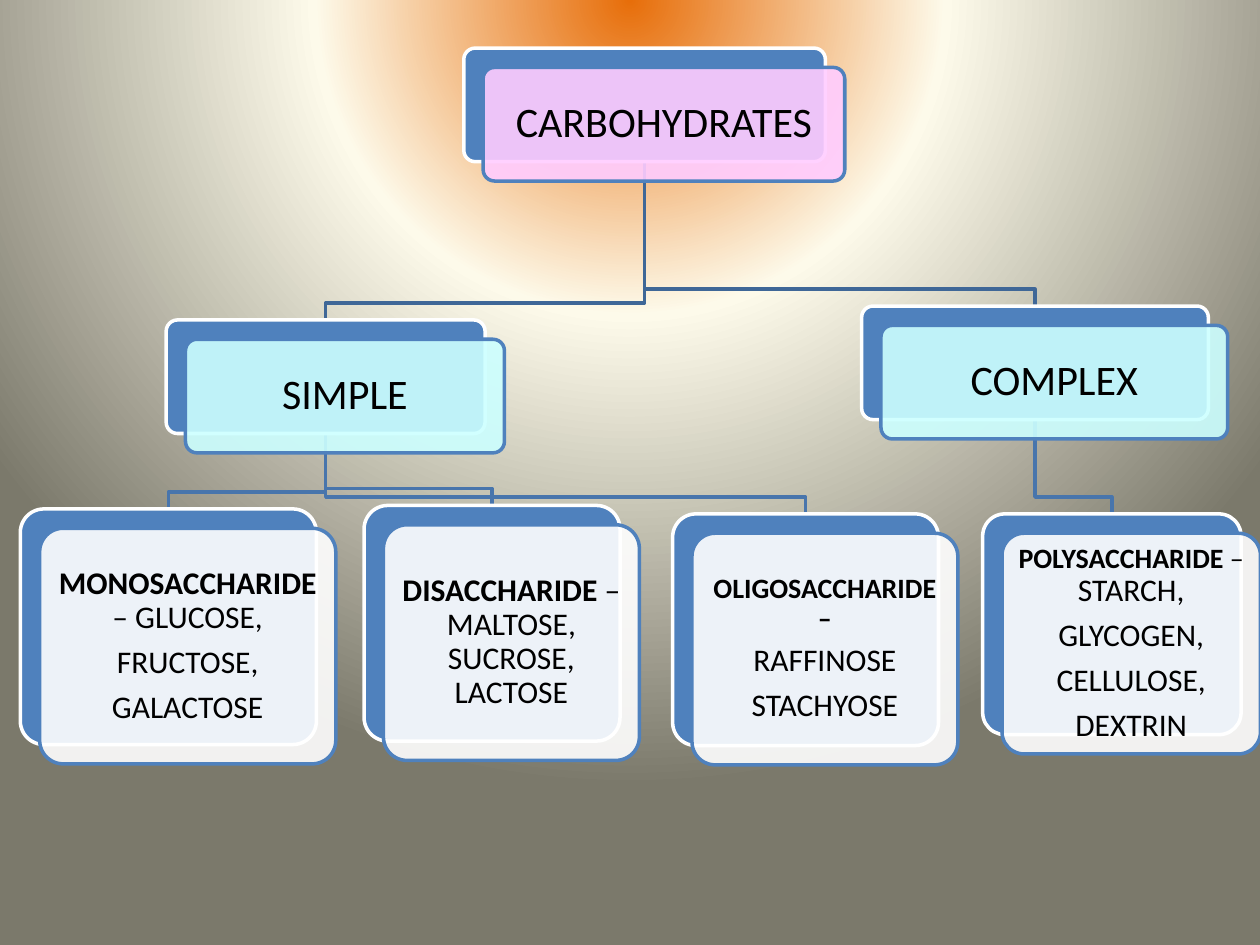
from collections import namedtuple

from lxml import etree
from pptx import Presentation
from pptx.dml.color import RGBColor
from pptx.enum.shapes import MSO_SHAPE
from pptx.enum.text import MSO_ANCHOR, PP_ALIGN
from pptx.oxml import parse_xml
from pptx.oxml.ns import nsdecls, qn
from pptx.util import Cm, Pt

ROUNDED = MSO_SHAPE.ROUNDED_RECTANGLE
MIDDLE = MSO_ANCHOR.MIDDLE
CENTER = PP_ALIGN.CENTER

BLACK = RGBColor(0x00, 0x00, 0x00)
WHITE = RGBColor(0xFF, 0xFF, 0xFF)
BLUE = RGBColor(0x4F, 0x81, 0xBD)
PINK = RGBColor(0xFF, 0xCC, 0xFF)
CYAN = RGBColor(0xCC, 0xFF, 0xFF)
UPPER_LINE = RGBColor(0x3F, 0x67, 0x97)
LOWER_LINE = RGBColor(0x48, 0x75, 0xAC)
GLOW_STOPS = [
    (0, RGBColor(0xE7, 0x6E, 0x0A)),
    (40, RGBColor(0xFD, 0xFA, 0xEA)),
    (100, RGBColor(0x7B, 0x79, 0x6B)),
]

FONT = "Calibri"
CARD_OFFSET = 0.39  # shift of the front card from the back card, cm
BEND_HEIGHT = 0.34  # height of a branch's bend above the child, cm
LINE_WIDTH = Pt(2)

# Box of a back card, in cm
Box = namedtuple("Box", "left top width height")

BOXES = {
    "carbohydrates": Box(9.35, 0.97, 7.29, 2.29),
    "simple": Box(3.35, 6.45, 6.43, 2.29),
    "complex": Box(17.37, 6.17, 6.99, 2.29),
    "monosaccharide": Box(0.41, 10.26, 5.97, 4.75),
    "disaccharide": Box(7.34, 10.19, 5.16, 4.75),
    "oligosaccharide": Box(13.56, 10.36, 5.36, 4.67),
    "polysaccharide": Box(19.81, 10.36, 5.21, 4.45),
}

# Parent, child and colour, from back to front
BRANCHES = [
    ("complex", "polysaccharide", LOWER_LINE),
    ("carbohydrates", "complex", UPPER_LINE),
    ("simple", "oligosaccharide", LOWER_LINE),
    ("simple", "disaccharide", LOWER_LINE),
    ("simple", "monosaccharide", LOWER_LINE),
    ("carbohydrates", "simple", UPPER_LINE),
]

# Headings: name, text, colour
HEADINGS = [
    ("carbohydrates", "CARBOHYDRATES", PINK),
    ("simple", "SIMPLE", CYAN),
    ("complex", "COMPLEX", CYAN),
]

# Saccharides: name, paragraphs of (text, size, bold) runs
SACCHARIDES = [
    ("monosaccharide", [
        [("MONOSACCHARIDE", 18, True), (" – GLUCOSE,", 18, False)],
        [("FRUCTOSE,", 18, False)],
        [("GALACTOSE", 18, False)],
    ]),
    ("disaccharide", [
        [("DISACCHARIDE", 18, True),
         (" – MALTOSE, SUCROSE, LACTOSE", 18, False)],
    ]),
    ("oligosaccharide", [
        [("OLIGOSACCHARIDE –", 16, True)],
        [("RAFFINOSE", 18, False)],
        [("STACHYOSE", 18, False)],
    ]),
    ("polysaccharide", [
        [("POLYSACCHARIDE", 16, True), (" – ", 16, False),
         ("STARCH,", 18, False)],
        [("GLYCOGEN,", 18, False)],
        [("CELLULOSE,", 18, False)],
        [("DEXTRIN", 18, False)],
    ]),
]


def set_glow_background(slide):
    """Radial gradient whose centre lies above the slide."""
    stops = "".join(
        f'<a:gs pos="{position * 1000}"><a:srgbClr val="{color}"/></a:gs>'
        for position, color in GLOW_STOPS)
    background = parse_xml(
        f'<p:bg {nsdecls("p", "a")}><p:bgPr><a:gradFill rotWithShape="1">'
        f'<a:gsLst>{stops}</a:gsLst><a:path path="circle">'
        '<a:fillToRect l="50000" t="-80000" r="50000" b="180000"/></a:path>'
        '</a:gradFill><a:effectLst/></p:bgPr></p:bg>')
    slide.element.cSld.insert(0, background)


def add_run(paragraph, text, size=18, bold=False, color=BLACK):
    run = paragraph.add_run()
    run.text = text
    run.font.name = FONT
    run.font.size = Pt(size)
    run.font.bold = bold
    run.font.color.rgb = color


def write_text(shape, paragraphs, inset):
    frame = shape.text_frame
    frame.word_wrap = True
    frame.vertical_anchor = MIDDLE
    frame.margin_left = frame.margin_right = Cm(inset)
    frame.margin_top = frame.margin_bottom = Cm(inset)
    for index, runs in enumerate(paragraphs):
        paragraph = frame.add_paragraph() if index else frame.paragraphs[0]
        paragraph.alignment = CENTER
        paragraph.line_spacing = 0.9
        # Spacing after as a share of the line height
        space_after = etree.SubElement(
            paragraph._p.get_or_add_pPr(), qn("a:spcAft"))
        etree.SubElement(space_after, qn("a:spcPct"), val="35000")
        for text, size, bold in runs:
            add_run(paragraph, text, size=size, bold=bold)


def add_card(slide, box, fill, line, alpha=None):
    card = slide.shapes.add_shape(ROUNDED, *(Cm(length) for length in box))
    card.adjustments[0] = 0.1
    card.shadow.inherit = False
    card.fill.solid()
    card.fill.fore_color.rgb = fill
    if alpha is not None:
        color = card._element.spPr.find(qn("a:solidFill"))[0]
        etree.SubElement(color, qn("a:alpha"), val=str(alpha * 1000))
    card.line.color.rgb = line
    card.line.width = LINE_WIDTH
    return card


def add_node(slide, box, paragraphs, fill, inset):
    """Blue back card with a translucent text card shifted over it."""
    add_card(slide, box, BLUE, WHITE)
    front_box = box._replace(left=box.left + CARD_OFFSET,
                             top=box.top + CARD_OFFSET)
    front = add_card(slide, front_box, fill, BLUE, alpha=90)
    write_text(front, paragraphs, inset)


def add_branch(slide, parent, child, color):
    """Elbow line from the bottom of one box to the top of another."""
    start_x = Cm(parent.left + parent.width / 2)
    start_y = Cm(parent.top + parent.height)
    end_x = Cm(child.left + child.width / 2)
    bend_y = Cm(child.top - BEND_HEIGHT)
    builder = slide.shapes.build_freeform(start_x, start_y)
    builder.add_line_segments(
        [(start_x, bend_y), (end_x, bend_y), (end_x, Cm(child.top))],
        close=False)
    branch = builder.convert_to_shape()
    branch.shadow.inherit = False
    branch.fill.background()
    branch.line.color.rgb = color
    branch.line.width = LINE_WIDTH


def add_tree(slide):
    # Branches lie behind the cards
    for parent, child, color in BRANCHES:
        add_branch(slide, BOXES[parent], BOXES[child], color)
    for name, text, fill in HEADINGS:
        add_node(slide, BOXES[name], [[(text, 24, False)]], fill, inset=0.25)
    for name, paragraphs in SACCHARIDES:
        add_node(slide, BOXES[name], paragraphs, WHITE, inset=0.17)


def main():
    presentation = Presentation()
    presentation.slide_width = Cm(25.4)
    presentation.slide_height = Cm(19.05)
    slide = presentation.slides.add_slide(presentation.slide_layouts[6])
    set_glow_background(slide)
    add_tree(slide)
    presentation.save("out.pptx")


if __name__ == "__main__":
    main()
